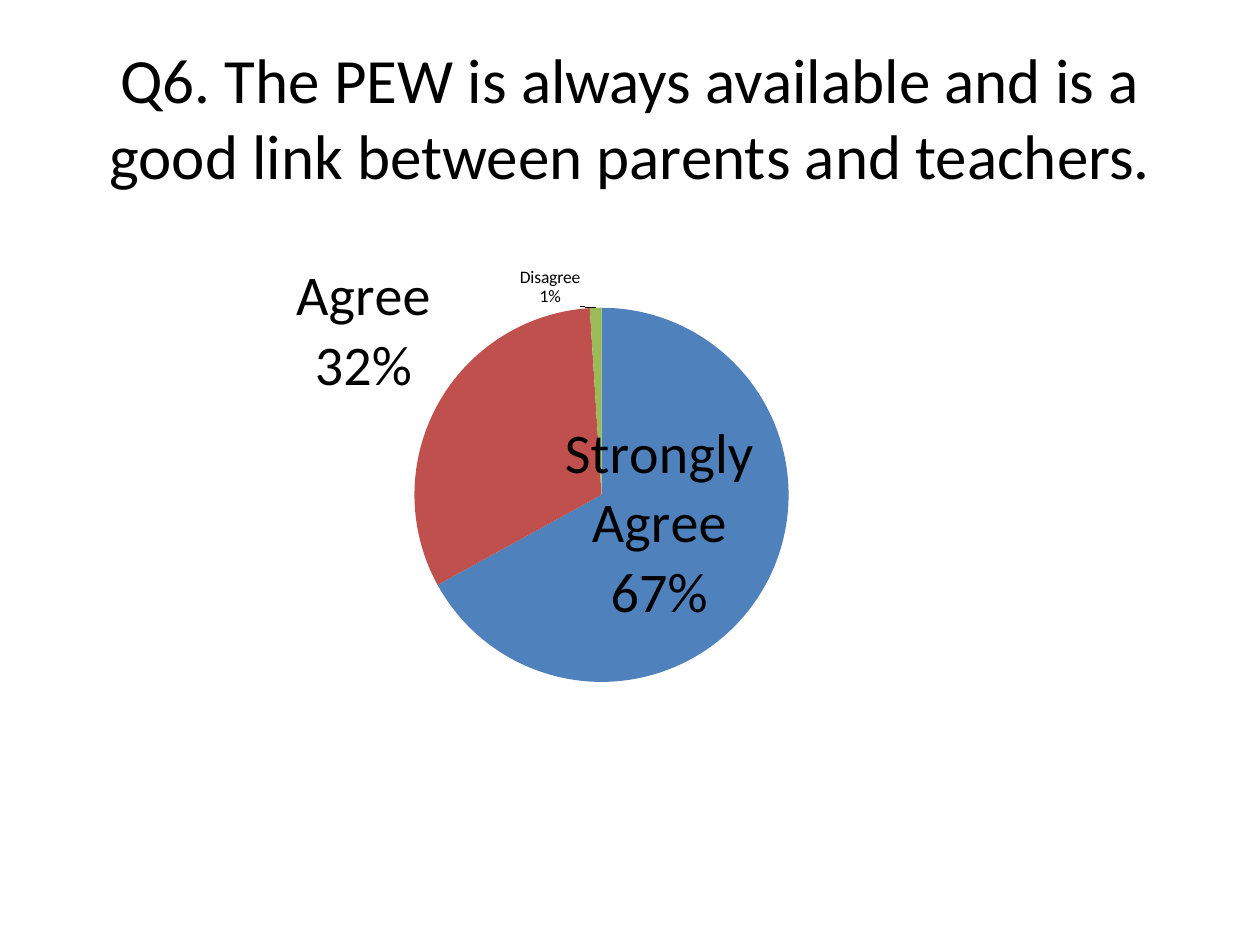
from dataclasses import dataclass

from lxml.etree import SubElement
from pptx import Presentation
from pptx.chart.data import CategoryChartData
from pptx.dml.color import RGBColor
from pptx.enum.chart import XL_CHART_TYPE, XL_LABEL_POSITION
from pptx.enum.text import MSO_ANCHOR, PP_ALIGN
from pptx.oxml import parse_xml
from pptx.oxml.ns import nsdecls, qn
from pptx.util import Inches, Pt


@dataclass(frozen=True)
class Theme:
    """Hold the colours and type sizes of the slide."""
    font: str = "Calibri"
    ink: RGBColor = RGBColor(0, 0, 0)
    fills: tuple = ("4F81BD", "C0504D", "9BBB59", "8064A2")
    title: int = 36
    large: int = 32
    small: int = 10


THEME = Theme()


def style(font, size):
    """Give a font the theme's face and ink at a size."""
    font.name, font.size = THEME.font, Pt(size)
    font.color.rgb = THEME.ink


def layout(**parts):
    """Make a manual chart layout from its parts."""
    node = parse_xml(f"<c:layout {nsdecls('c')}><c:manualLayout/></c:layout>")
    for name, value in parts.items():
        SubElement(node[0], qn(f"c:{name}")).set("val", str(value))
    return node


def add_title(slide, text):
    """Fill and place the title."""
    title = slide.shapes.title
    title.left, title.top = Inches(0.5), Inches(0.3)
    title.width, title.height = Inches(9), Inches(1.25)
    frame = title.text_frame
    frame.text = text
    frame.word_wrap = True
    frame.vertical_anchor = MSO_ANCHOR.MIDDLE
    line = frame.paragraphs[0]
    line.alignment = PP_ALIGN.CENTER
    style(line.font, THEME.title)


def add_label(series, index, text, size, shift):
    """Label one slice, shifted from its place outside the edge."""
    label = series.points[index].data_label
    frame = label.text_frame
    frame.text = text
    for line in frame.paragraphs:
        for run in line.runs:
            style(run.font, size)
    label.position = XL_LABEL_POSITION.OUTSIDE_END
    node = series.data_labels._element.findall(qn("c:dLbl"))[index]
    node.insert(1, layout(x=shift[0], y=shift[1]))


def add_pie(slide, names, values):
    """Draw the pie and return its series."""
    data = CategoryChartData()
    data.categories = names
    data.add_series("Series 1", values)
    chart = slide.shapes.add_chart(
        XL_CHART_TYPE.PIE, Inches(0.5), Inches(1.75), Inches(9), Inches(4.95), data
    ).chart
    chart.has_title = chart.has_legend = False
    style(chart.font, THEME.small)
    plot = chart.plots[0]
    plot.vary_by_categories = True
    area = chart._chartSpace.chart.plotArea
    for old in area.findall(qn("c:layout")):
        area.remove(old)
    area.insert(0, layout(layoutTarget="inner", xMode="edge", yMode="edge",
                          x=0.31, y=0.14, w=0.33, h=0.6))
    series = plot.series[0]
    for index, tint in enumerate(THEME.fills):
        fill = series.points[index].format.fill
        fill.solid()
        fill.fore_color.rgb = RGBColor.from_string(tint)
    series.data_labels.show_value = False
    return series


def main():
    """Build the survey slide."""
    deck = Presentation()
    deck.slide_width, deck.slide_height = Inches(10), Inches(7.5)
    slide = deck.slides.add_slide(deck.slide_layouts[5])
    add_title(slide, "Q6. The PEW is always available and is a good link "
                     "between parents and teachers.")
    series = add_pie(slide, ("SA", "A", "D", "SD"), (67, 32, 1, 0))
    labels = (
        ("Strongly Agree\n67%", THEME.large, (-0.18, -0.28)),
        ("Agree\n32%", THEME.large, (0, 0)),
        ("Disagree\n1%", THEME.small, (-0.04, 0.01)),
    )
    for index, label in enumerate(labels):
        add_label(series, index, *label)
    deck.save("out.pptx")


if __name__ == "__main__":
    main()
